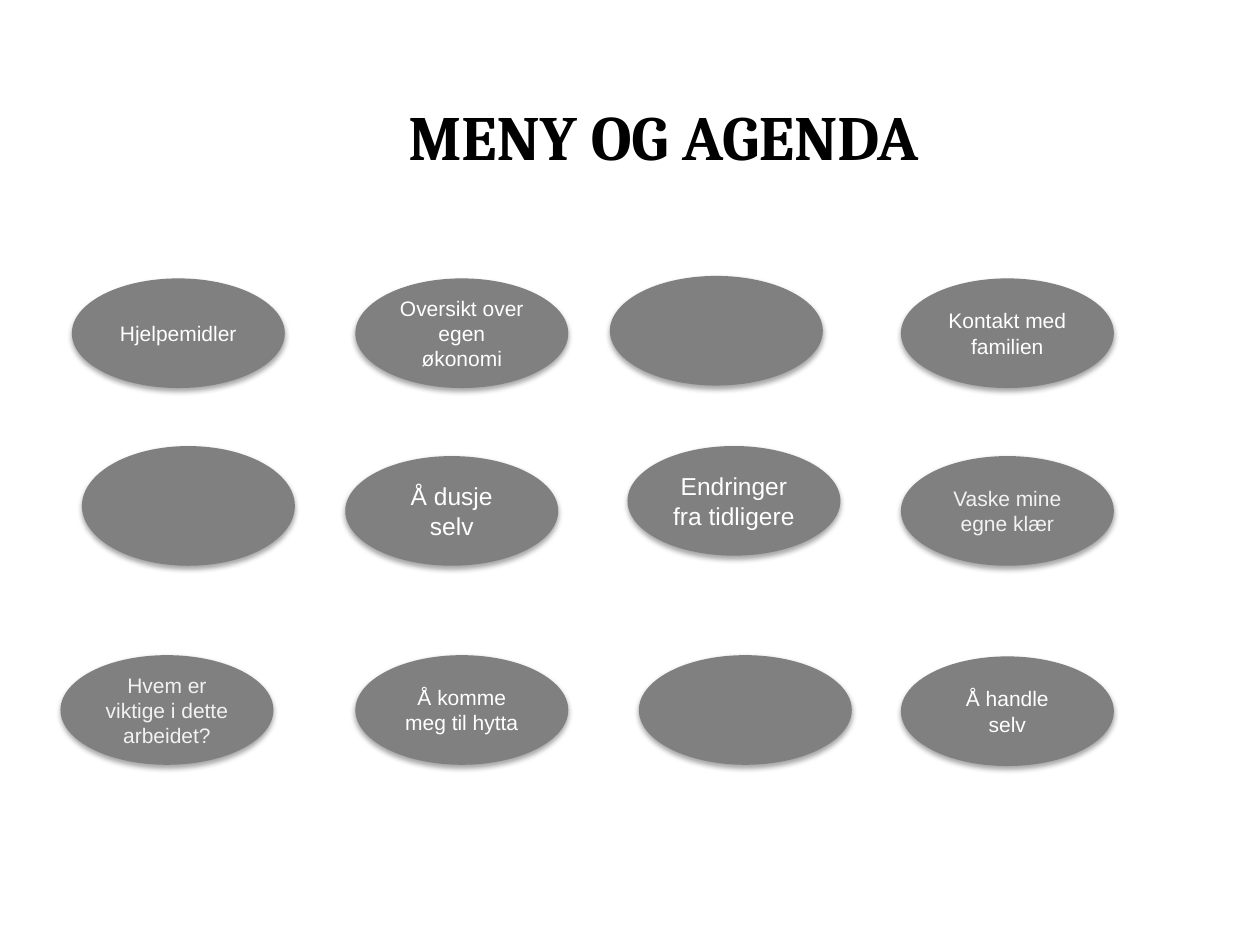
from dataclasses import dataclass

from lxml import etree
from pptx import Presentation
from pptx import util as u
from pptx.dml.color import RGBColor
from pptx.enum import shapes, text
from pptx.oxml import ns


@dataclass(frozen=True)
class Theme:
    ink: str = "000000"
    oval: str = "808080"
    white: str = "FFFFFF"
    soft: str = "F2F2F2"
    title_size: int = 36
    large: int = 14
    small: int = 12
    title_font: str = "Cambria"
    body_font: str = "Arial"


theme = Theme()


def write(holder, words, size, color, font, bold=False):
    frame = holder.text_frame
    frame.word_wrap = True
    frame.vertical_anchor = text.MSO_ANCHOR.MIDDLE
    line = frame.paragraphs[0]
    line.alignment = text.PP_ALIGN.CENTER
    run = line.add_run()
    run.text = words
    formats = {"name": font, "size": u.Pt(size), "bold": bold}
    for attribute, value in formats.items():
        setattr(run.font, attribute, value)
    run.font.color.rgb = RGBColor.from_string(color)


def add_soft_shadow(oval):
    oval.shadow.inherit = False
    effects = oval.element.spPr.find(ns.qn("a:effectLst"))
    shadow = etree.SubElement(
        effects, ns.qn("a:outerShdw"), blurRad=str(u.Pt(3.1)),
        dist=str(u.Pt(1.8)), dir="5400000", rotWithShape="0")
    black = etree.SubElement(shadow, ns.qn("a:srgbClr"), val=theme.ink)
    etree.SubElement(black, ns.qn("a:alpha"), val="35000")


deck = Presentation()
deck.slide_width, deck.slide_height = u.Inches(10), u.Inches(7.5)
slide = deck.slides.add_slide(deck.slide_layouts[6])

# Title
title = slide.shapes.add_textbox(
    u.Inches(1.08), u.Inches(0.6), u.Inches(8.37), u.Inches(0.95))
write(title, "MENY OG AGENDA", theme.title_size, theme.ink,
      theme.title_font, bold=True)

# Menu topics, row by row: left, top, words, size, colour
OVAL_WIDTH, OVAL_HEIGHT, TALL_HEIGHT = 1.69, 0.87, 0.95
small, large, white, soft = theme.small, theme.large, theme.white, theme.soft
topics = [
    (0.57, 2.21, "Hjelpemidler", small, white),
    (2.82, 2.21, "Oversikt over egen økonomi", small, white),
    (4.84, 2.19, "", small, white),
    (7.15, 2.21, "Kontakt med familien", small, white),
    (0.65, 3.54, "", small, white),
    (2.74, 3.62, "Å dusje selv", large, white),
    (4.98, 3.54, "Endringer fra tidligere", large, white),
    (7.15, 3.62, "Vaske mine egne klær", small, soft),
    (0.48, 5.2, "Hvem er viktige i dette arbeidet?", small, soft),
    (2.82, 5.2, "Å komme meg til hytta", small, white),
    (5.07, 5.2, "", small, white),
    (7.15, 5.21, "Å handle selv", small, white),
]
for left, top, words, size, color in topics:
    # The empty oval in the second row is slightly taller
    height = TALL_HEIGHT if (left, top) == (0.65, 3.54) else OVAL_HEIGHT
    topic = slide.shapes.add_shape(
        shapes.MSO_SHAPE.OVAL, u.Inches(left), u.Inches(top),
        u.Inches(OVAL_WIDTH), u.Inches(height))
    topic.fill.solid()
    topic.fill.fore_color.rgb = RGBColor.from_string(theme.oval)
    topic.line.fill.background()
    add_soft_shadow(topic)
    if words:
        write(topic, words, size, color, theme.body_font)

deck.save("out.pptx")
